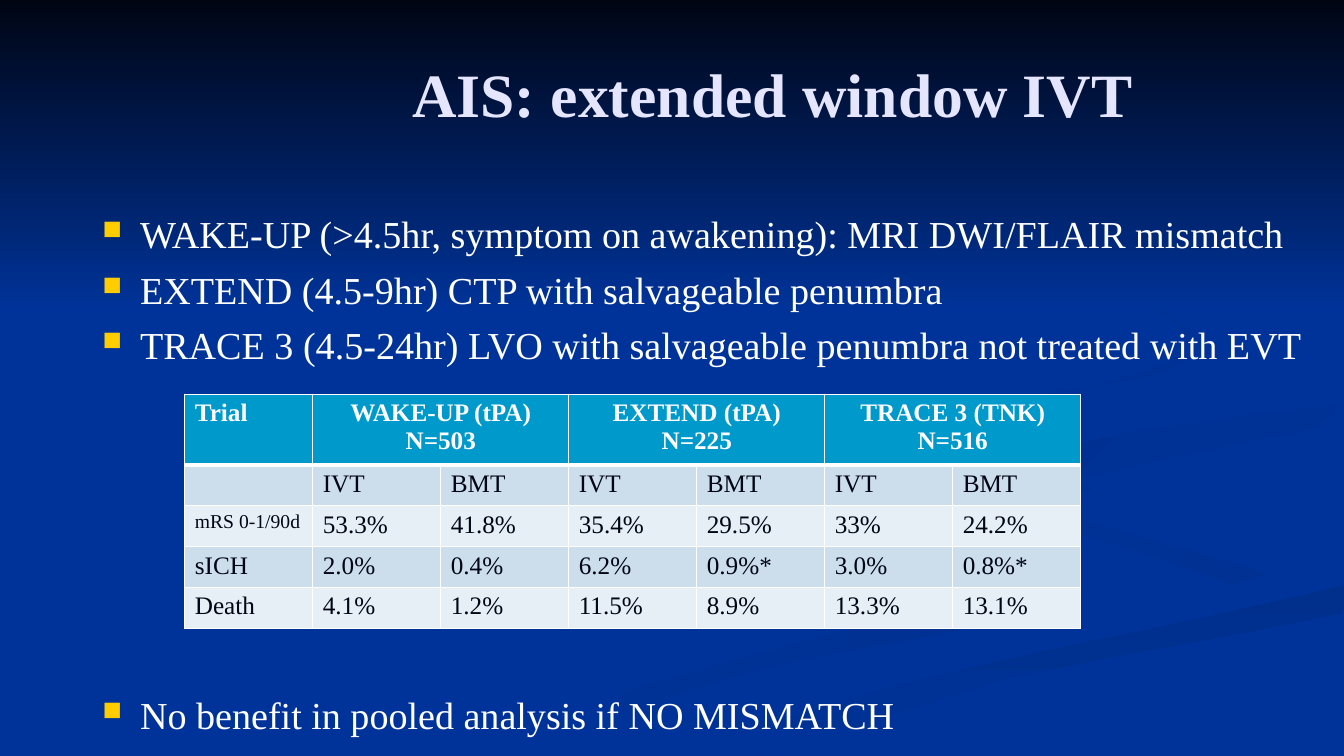
from lxml import etree
from pptx import Presentation
from pptx.dml.color import RGBColor
from pptx.enum.shapes import MSO_SHAPE
from pptx.enum.text import MSO_ANCHOR, PP_ALIGN
from pptx.oxml import parse_xml
from pptx.oxml.ns import nsdecls, qn
from pptx.util import Pt

RECTANGLE = MSO_SHAPE.RECTANGLE
TOP, MIDDLE = MSO_ANCHOR.TOP, MSO_ANCHOR.MIDDLE
LEFT, CENTER = PP_ALIGN.LEFT, PP_ALIGN.CENTER

WIDTH, HEIGHT = 960, 540
FONT = "Times New Roman"
COLORS = {
    "background": "003399",
    "night": "000514",
    "title": "E5E5FF",
    "white": "FFFFFF",
    "bullet": "FFCC00",
    "header": "0099CC",
    "odd_row": "CCDEEC",
    "even_row": "E7EFF6",
    "shade_1": "003193",
    "shade_2": "002F8C",
    "shade_3": "003091",
    "shade_4": "002F8E",
}

# Background ribbons: start colour, end colour, angle, bends in points
RIBBONS = [
    ("background", "shade_1", 0, [
        (750, 398), (559, 343), (549, 343), (744, 398), (748, 417), (592, 453),
        (288, 539), (347, 539), (541, 479), (726, 442), (768, 418)]),
    ("background", "shade_1", 45, [
        (905, 410), (760, 366), (695, 334), (736, 369), (881, 418), (858, 436),
        (903, 418)]),
    ("shade_2", "background", 90, [
        (483, 539), (549, 539), (722, 484), (958, 438), (958, 418), (668, 482)]),
    ("background", "background", 0, [
        (696, 334), (868, 389), (905, 410), (636, 481), (458, 539), (668, 482),
        (959, 418), (959, 387), (750, 333), (789, 312), (959, 279), (775, 300)]),
    ("shade_3", "background", 45, [
        (750, 331), (793, 357), (773, 341), (958, 302), (958, 289), (789, 312)]),
    ("shade_4", "background", 45, [
        (656, 310), (858, 248), (732, 168), (853, 241), (818, 269), (676, 294),
        (554, 333), (597, 360), (570, 338)]),
]

TRIALS = [
    "WAKE-UP (>4.5hr, symptom on awakening): MRI DWI/FLAIR mismatch",
    "EXTEND (4.5-9hr) CTP with salvageable penumbra",
    "TRACE 3 (4.5-24hr) LVO with salvageable penumbra not treated with EVT",
]
CONCLUSION = ["No benefit in pooled analysis if NO MISMATCH"]

TRIAL_HEADERS = ["WAKE-UP (tPA) N=503", "EXTEND (tPA) N=225", "TRACE 3 (TNK) N=516"]
OUTCOMES = [
    ["", *["IVT", "BMT"] * len(TRIAL_HEADERS)],
    ["mRS 0-1/90d", "53.3%", "41.8%", "35.4%", "29.5%", "33%", "24.2%"],
    ["sICH", "2.0%", "0.4%", "6.2%", "0.9%*", "3.0%", "0.8%*"],
    ["Death", "4.1%", "1.2%", "11.5%", "8.9%", "13.3%", "13.1%"],
]


def rgb(name):
    return RGBColor.from_string(COLORS[name])


def write(paragraph, text, size=18, color="white", bold=False, align=LEFT):
    paragraph.alignment = align
    font = paragraph.font
    if text:
        run = paragraph.add_run()
        run.text = text
        font = run.font
    font.name, font.size, font.bold = FONT, Pt(size), bold
    font.color.rgb = rgb(color)


def shade(shape, start, end, angle):
    """Fill with a gradient whose angle runs clockwise."""
    shape.shadow.inherit = False
    shape.line.fill.background()
    shape.fill.gradient()
    shape.fill.gradient_angle = -angle % 360
    for stop, name in zip(shape.fill.gradient_stops, (start, end)):
        stop.color.rgb = rgb(name)


def smooth(bends, steps=6, tension=0.3):
    """Join the bends by a closed Hermite curve kept on the slide."""
    curve = []
    for i, here in enumerate(bends):
        before, after = bends[i - 1], bends[(i + 1) % len(bends)]
        beyond = bends[(i + 2) % len(bends)]
        for step in range(steps):
            t = step / steps
            blend = t * t * (3 - 2 * t)
            leave, arrive = t * (1 - t) ** 2, t * t * (t - 1)
            x, y = (a + blend * (b - a)
                    + tension * (leave * (b - p) + arrive * (n - a))
                    for p, a, b, n in zip(before, here, after, beyond))
            curve.append((min(round(x), WIDTH), min(round(y), HEIGHT)))
    return curve


def add_ribbon(slide, start, end, angle, bends):
    outline = smooth(bends)
    builder = slide.shapes.build_freeform(*outline[0], scale=Pt(1))
    builder.add_line_segments(outline[1:], close=True)
    shade(builder.convert_to_shape(), start, end, angle)


def add_text_frame(slide, left, top, width, height, anchor=TOP):
    box = slide.shapes.add_textbox(Pt(left), Pt(top), Pt(width), Pt(height))
    frame = box.text_frame
    frame.word_wrap = True
    frame.vertical_anchor = anchor
    return frame


def add_bullets(slide, top, height, items):
    frame = add_text_frame(slide, 66, top, 880, height)
    for index, item in enumerate(items):
        paragraph = frame.add_paragraph() if index else frame.paragraphs[0]
        if index:
            paragraph.space_before = Pt(6.8)
        properties = paragraph._p.get_or_add_pPr()
        properties.set("marL", str(Pt(27)))
        properties.set("indent", str(-Pt(27)))
        color = etree.SubElement(properties, qn("a:buClr"))
        etree.SubElement(color, qn("a:srgbClr"), val=COLORS["bullet"])
        etree.SubElement(properties, qn("a:buSzPct"), val="70000")
        etree.SubElement(properties, qn("a:buChar"), char="■")
        write(paragraph, item, size=27.2)


def format_cell(cell, text, fill, bottom=1, **text_format):
    properties = cell._tc.get_or_add_tcPr()
    for side, width in (("L", 1), ("R", 1), ("T", 1), ("B", bottom)):
        properties.append(parse_xml(
            f'<a:ln{side} {nsdecls("a")} w="{Pt(width)}"><a:solidFill>'
            f'<a:srgbClr val="{COLORS["white"]}"/></a:solidFill></a:ln{side}>'))
    cell.fill.solid()
    cell.fill.fore_color.rgb = rgb(fill)
    write(cell.text_frame.paragraphs[0], text, **text_format)


def add_outcome_table(slide):
    rows, columns = len(OUTCOMES) + 1, len(OUTCOMES[0])
    table = slide.shapes.add_table(
        rows, columns, Pt(132), Pt(281.6), Pt(640), Pt(164.8)).table
    table.horz_banding = False
    for column in table.columns:
        column.width = Pt(640 / columns)
    for index, row in enumerate(table.rows):
        row.height = Pt(29.2 if index else 48)

    # Header: each trial spans its IVT and BMT columns
    format_cell(table.cell(0, 0), "Trial", "header", bottom=3, bold=True)
    for index, trial in enumerate(TRIAL_HEADERS):
        first, second = (table.cell(0, 2 * index + n) for n in (1, 2))
        first.merge(second)
        format_cell(first, trial, "header", bottom=3, bold=True, align=CENTER)
        format_cell(second, "", "header", bottom=3)

    # Outcomes
    for r, values in enumerate(OUTCOMES, start=1):
        for c, value in enumerate(values):
            format_cell(table.cell(r, c), value, "odd_row" if r % 2 else "even_row",
                        size=14 if value.startswith("mRS") else 18, color="night")


def main():
    deck = Presentation()
    deck.slide_width, deck.slide_height = Pt(WIDTH), Pt(HEIGHT)
    slide = deck.slides.add_slide(deck.slide_layouts[6])

    # Background
    slide.background.fill.solid()
    slide.background.fill.fore_color.rgb = rgb("background")
    for ribbon in RIBBONS:
        add_ribbon(slide, *ribbon)
    sky = slide.shapes.add_shape(RECTANGLE, 0, 0, Pt(WIDTH), Pt(222))
    shade(sky, "night", "background", 90)

    # Content
    title = add_text_frame(slide, 144, 21.6, 816, 90, anchor=MIDDLE)
    write(title.paragraphs[0], "AIS: extended window IVT",
          size=44, color="title", bold=True, align=CENTER)
    add_bullets(slide, 147, 120, TRIALS)
    add_outcome_table(slide)
    add_bullets(slide, 490, 42, CONCLUSION)

    deck.save("out.pptx")


if __name__ == "__main__":
    main()
